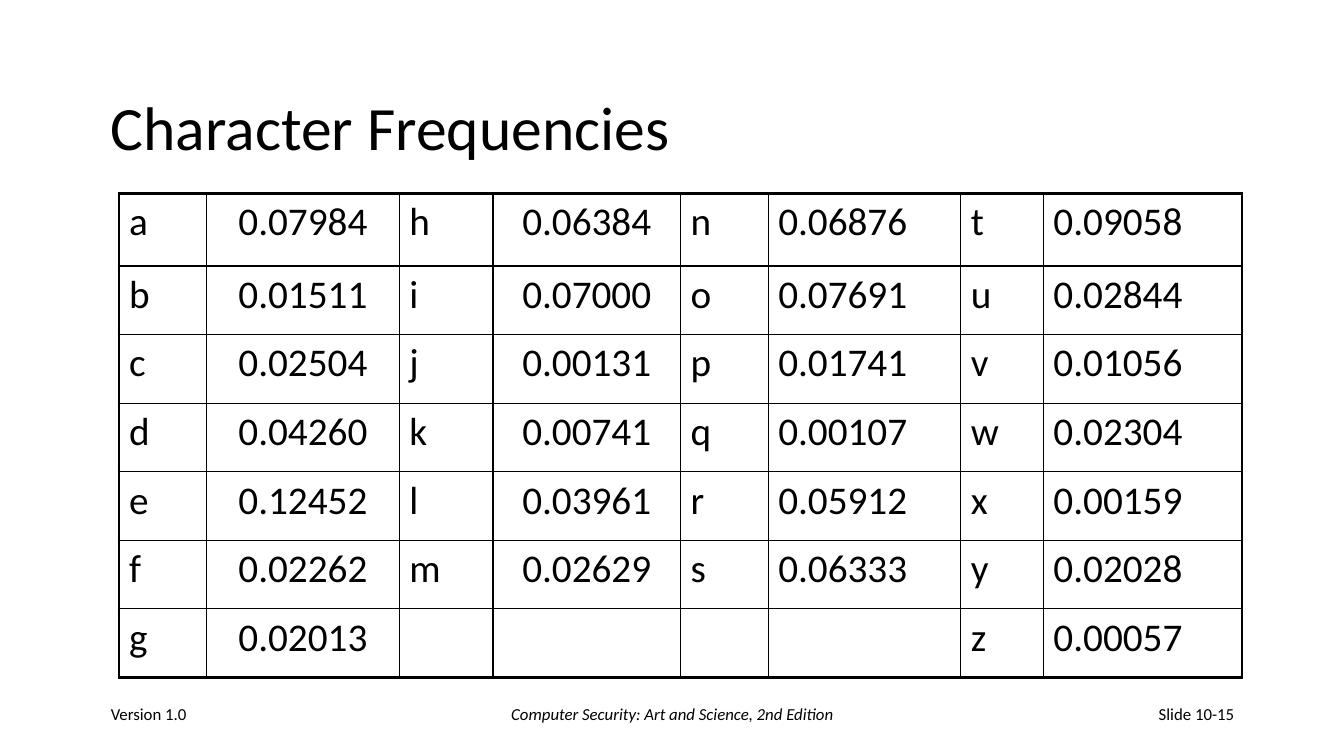
from lxml import etree
from pptx import Presentation
from pptx.dml.color import RGBColor
from pptx.enum.text import MSO_ANCHOR, PP_ALIGN
from pptx.oxml.ns import qn
from pptx.util import Inches, Pt

BLACK = RGBColor(0x00, 0x00, 0x00)
FONT = "Calibri"
THIN, THICK = Pt(1), Pt(2.25)

# Letters with their frequencies, one list per pair of columns
FREQUENCIES = [
    [("a", "0.07984"), ("b", "0.01511"), ("c", "0.02504"), ("d", "0.04260"),
     ("e", "0.12452"), ("f", "0.02262"), ("g", "0.02013")],
    [("h", "0.06384"), ("i", "0.07000"), ("j", "0.00131"), ("k", "0.00741"),
     ("l", "0.03961"), ("m", "0.02629")],
    [("n", "0.06876"), ("o", "0.07691"), ("p", "0.01741"), ("q", "0.00107"),
     ("r", "0.05912"), ("s", "0.06333")],
    [("t", "0.09058"), ("u", "0.02844"), ("v", "0.01056"), ("w", "0.02304"),
     ("x", "0.00159"), ("y", "0.02028"), ("z", "0.00057")],
]
COLUMN_WIDTHS = [0.87, 1.91, 0.93, 1.86, 0.87, 1.91, 0.82, 1.97]
ROW_HEIGHTS = [0.72] + [0.68] * 6
CENTERED_COLUMNS = (1, 3)


def style(paragraph, size, align=PP_ALIGN.LEFT, italic=False):
    paragraph.alignment = align
    font = paragraph.font
    font.name, font.size, font.italic = FONT, Pt(size), italic
    font.color.rgb = BLACK


def add_label(slide, text, left, top, width, height, size,
              align=PP_ALIGN.LEFT, italic=False):
    frame = slide.shapes.add_textbox(
        Inches(left), Inches(top), Inches(width), Inches(height)).text_frame
    frame.word_wrap = True
    frame.vertical_anchor = MSO_ANCHOR.MIDDLE
    label = frame.paragraphs[0]
    label.text = text
    style(label, size, align, italic)
    return label


def set_borders(cell, widths):
    """Draw the cell's sides; widths go left, right, top, bottom."""
    properties = cell._tc.get_or_add_tcPr()
    for position, (side, width) in enumerate(zip("LRTB", widths)):
        line = etree.Element(qn(f"a:ln{side}"), w=str(width))
        fill = etree.SubElement(line, qn("a:solidFill"))
        etree.SubElement(fill, qn("a:srgbClr"), val=str(BLACK))
        properties.insert(position, line)


def add_frequency_table(slide):
    rows, columns = len(ROW_HEIGHTS), len(COLUMN_WIDTHS)
    table = slide.shapes.add_table(
        rows, columns, Inches(1.18), Inches(1.92),
        Inches(sum(COLUMN_WIDTHS)), Inches(sum(ROW_HEIGHTS))).table
    table.first_row = table.horz_banding = False
    for column, width in zip(table.columns, COLUMN_WIDTHS):
        column.width = Inches(width)
    for row, height in zip(table.rows, ROW_HEIGHTS):
        row.height = Inches(height)

    # Thick outer frame, thin inner grid
    for r in range(rows):
        for c in range(columns):
            cell = table.cell(r, c)
            cell.fill.background()
            outer = (c == 0, c == columns - 1, r == 0, r == rows - 1)
            set_borders(cell, [THICK if edge else THIN for edge in outer])

    # Letters and values, filled downwards
    for pair, entries in enumerate(FREQUENCIES):
        for r, entry in enumerate(entries):
            for c, text in enumerate(entry, start=2 * pair):
                content = table.cell(r, c).text_frame.paragraphs[0]
                content.text = text
                style(content, 28, PP_ALIGN.CENTER if c in CENTERED_COLUMNS
                      else PP_ALIGN.LEFT)


def main():
    presentation = Presentation()
    presentation.slide_width = Inches(13.33)
    presentation.slide_height = Inches(7.5)
    slide = presentation.slides.add_slide(presentation.slide_layouts[6])

    # Title
    title = add_label(slide, "Character Frequencies", 1, 0.67, 11.33, 1.25, 44)
    title.line_spacing = 0.9

    add_frequency_table(slide)

    # Footer
    add_label(slide, "Version 1.0", 1, 6.83, 2.78, 0.5, 12)
    add_label(slide, "Computer Security: Art and Science, 2nd Edition",
              4.56, 6.83, 4.22, 0.5, 12, PP_ALIGN.CENTER, italic=True)
    add_label(slide, "Slide 10-15", 9.56, 6.83, 2.78, 0.5, 12, PP_ALIGN.RIGHT)

    presentation.save("out.pptx")


if __name__ == "__main__":
    main()
